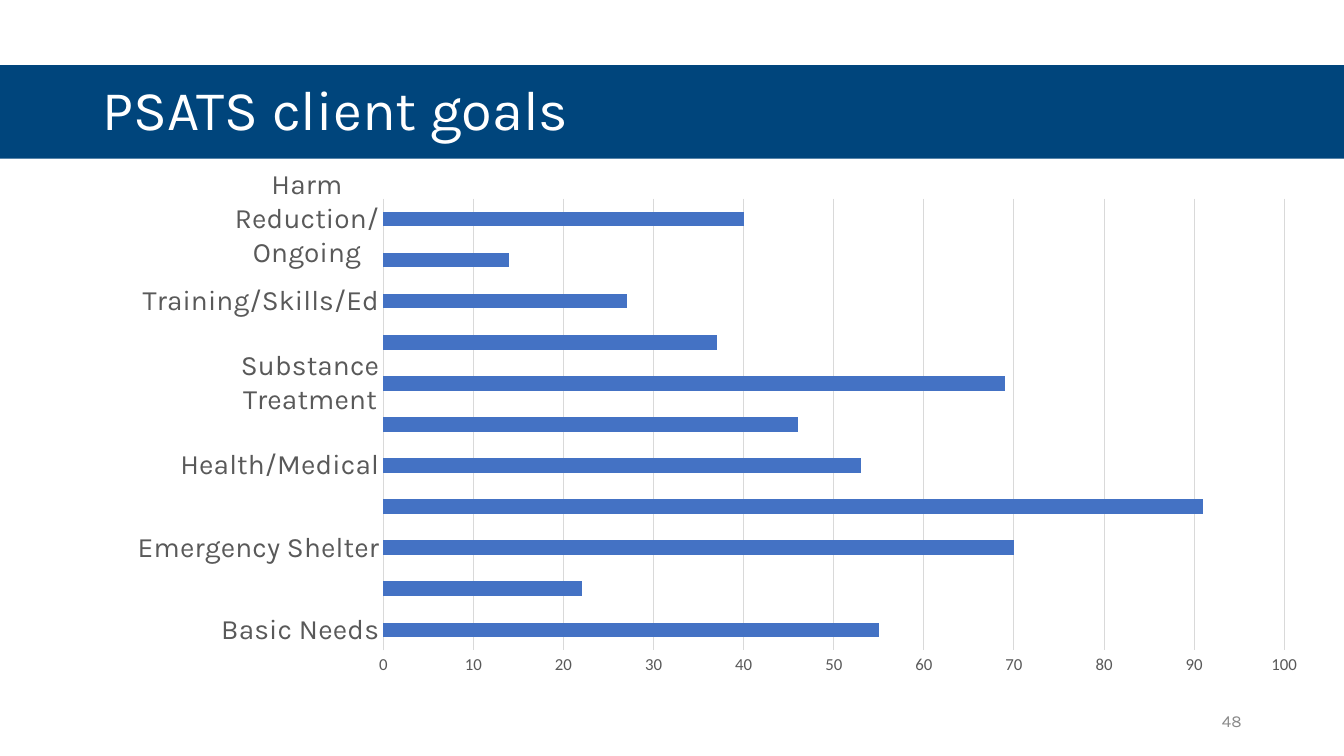
from dataclasses import dataclass

from lxml import etree
from pptx import Presentation
from pptx.chart.data import CategoryChartData
from pptx.dml.color import RGBColor
from pptx.enum.chart import XL_CHART_TYPE, XL_TICK_MARK
from pptx.enum.shapes import MSO_SHAPE
from pptx.enum.text import MSO_ANCHOR, PP_ALIGN
from pptx.oxml import parse_xml
from pptx.oxml.ns import nsdecls, qn
from pptx.util import Emu, Inches, Pt

BAR_CLUSTERED = XL_CHART_TYPE.BAR_CLUSTERED
NO_TICK = XL_TICK_MARK.NONE
RECTANGLE = MSO_SHAPE.RECTANGLE
MIDDLE = MSO_ANCHOR.MIDDLE
LEFT, RIGHT = PP_ALIGN.LEFT, PP_ALIGN.RIGHT

NAVY = RGBColor(0x00, 0x45, 0x7C)
BLUE = RGBColor(0x44, 0x72, 0xC4)
WHITE = RGBColor(0xFF, 0xFF, 0xFF)
BLACK = RGBColor(0x00, 0x00, 0x00)
DARK_GREY = RGBColor(0x59, 0x59, 0x59)
MID_GREY = RGBColor(0x89, 0x89, 0x89)
PALE_GREY = RGBColor(0xD9, 0xD9, 0xD9)

# The slide is a grid of 160 columns by 90 rows
SLIDE_WIDTH, SLIDE_HEIGHT = Inches(13.33), Inches(7.5)
COLUMN, ROW = SLIDE_WIDTH / 160, SLIDE_HEIGHT / 90


@dataclass(frozen=True)
class Area:
    column: float
    row: float
    columns: float
    rows: float

    def place(self) -> tuple:
        return (Emu(round(self.column * COLUMN)), Emu(round(self.row * ROW)),
                Emu(round(self.columns * COLUMN)), Emu(round(self.rows * ROW)))


@dataclass(frozen=True)
class Label:
    text: str
    area: Area
    size: float
    color: RGBColor
    align: PP_ALIGN
    line_spacing: float


@dataclass(frozen=True)
class Goal:
    clients: int
    name: str = ""


BAND = Area(0, 7.75, 160, 11.15)
CHART = Area(13.5, 10, 143.8, 71)
PLOT_SHARES = {"x": 0.02, "y": 0.17, "w": 0.96, "h": 0.82}
LABELS = [
    Label("PSATS client goals", Area(11, 4.7, 138, 17.4), 40, WHITE, LEFT, 0.9),
    Label("48", Area(113, 83.4, 36, 4.8), 12, MID_GREY, RIGHT, 1.0),
]
# Every second bar has no name on the axis
GOALS = [
    Goal(55, "Basic Needs"),
    Goal(22),
    Goal(70, "Emergency Shelter"),
    Goal(91),
    Goal(53, "Health/Medical"),
    Goal(46),
    Goal(69, "Substance Treatment"),
    Goal(37),
    Goal(27, "Training/Skills/Ed"),
    Goal(14),
    Goal(40, "Harm Reduction/Ongoing"),
]


def set_values(target, values: dict) -> None:
    for name, value in values.items():
        setattr(target, name, value)


def set_font(font, name: str, size: float, color: RGBColor) -> None:
    set_values(font, {"name": name, "size": Pt(size), "bold": False})
    font.color.rgb = color


def set_line(line, color: RGBColor) -> None:
    line.color.rgb = color
    line.width = Pt(0.75)


def add_band(page) -> None:
    band = page.shapes.add_shape(RECTANGLE, *BAND.place())
    band.shadow.inherit = False
    band.fill.solid()
    band.fill.fore_color.rgb = NAVY
    band.line.fill.background()


def add_label(page, label: Label) -> None:
    box = page.shapes.add_textbox(*label.area.place())
    set_values(box.text_frame, {"word_wrap": True, "vertical_anchor": MIDDLE})
    para = box.text_frame.paragraphs[0]
    set_values(para, {"alignment": label.align, "line_spacing": label.line_spacing})
    span = para.add_run()
    span.text = label.text
    set_font(span.font, "Karla", label.size, label.color)


def fix_plot_area(chart) -> None:
    """Place the plot by shares of the chart and let the band show through."""
    plot_area = chart.element.find(".//" + qn("c:plotArea"))
    for old_layout in plot_area.findall(qn("c:layout")):
        plot_area.remove(old_layout)
    layout = parse_xml(f"<c:layout {nsdecls('c')}><c:manualLayout/></c:layout>")
    settings = {"layoutTarget": "outer", "xMode": "edge", "yMode": "edge", **PLOT_SHARES}
    for name, value in settings.items():
        etree.SubElement(layout[0], qn(f"c:{name}")).set("val", str(value))
    plot_area.insert(0, layout)
    clear = parse_xml(f"<c:spPr {nsdecls('c', 'a')}><a:noFill/>"
                      "<a:ln><a:noFill/></a:ln></c:spPr>")
    chart.element.find(qn("c:chart")).addnext(clear)


def add_goals_chart(page) -> None:
    data = CategoryChartData()
    data.categories = [goal.name for goal in GOALS]
    data.add_series("", [goal.clients for goal in GOALS])
    chart = page.shapes.add_chart(BAR_CLUSTERED, *CHART.place(), data).chart
    set_values(chart, {"has_legend": False, "has_title": False})
    set_font(chart.font, "Calibri", 13.3, BLACK)
    fix_plot_area(chart)

    # Bars
    plot = chart.plots[0]
    set_values(plot, {"gap_width": 182, "vary_by_categories": False})
    bars = plot.series[0]
    bars.invert_if_negative = False
    bars.format.fill.solid()
    bars.format.fill.fore_color.rgb = BLUE

    # Axes
    goal_axis, count_axis = chart.category_axis, chart.value_axis
    for axis, font_name, size in ((goal_axis, "Karla", 20), (count_axis, "Calibri", 12)):
        set_values(axis, {"major_tick_mark": NO_TICK, "minor_tick_mark": NO_TICK})
        set_font(axis.tick_labels.font, font_name, size, DARK_GREY)
    set_values(count_axis, {"minimum_scale": 0, "maximum_scale": 100,
                            "major_unit": 10, "has_major_gridlines": True})
    set_line(goal_axis.format.line, PALE_GREY)
    set_line(count_axis.major_gridlines.format.line, PALE_GREY)
    count_axis.format.line.fill.background()


def main() -> None:
    deck = Presentation()
    set_values(deck, {"slide_width": SLIDE_WIDTH, "slide_height": SLIDE_HEIGHT})
    page = deck.slides.add_slide(deck.slide_layouts[6])
    add_band(page)
    for label in LABELS:
        add_label(page, label)
    add_goals_chart(page)
    deck.save("out.pptx")


if __name__ == "__main__":
    main()
